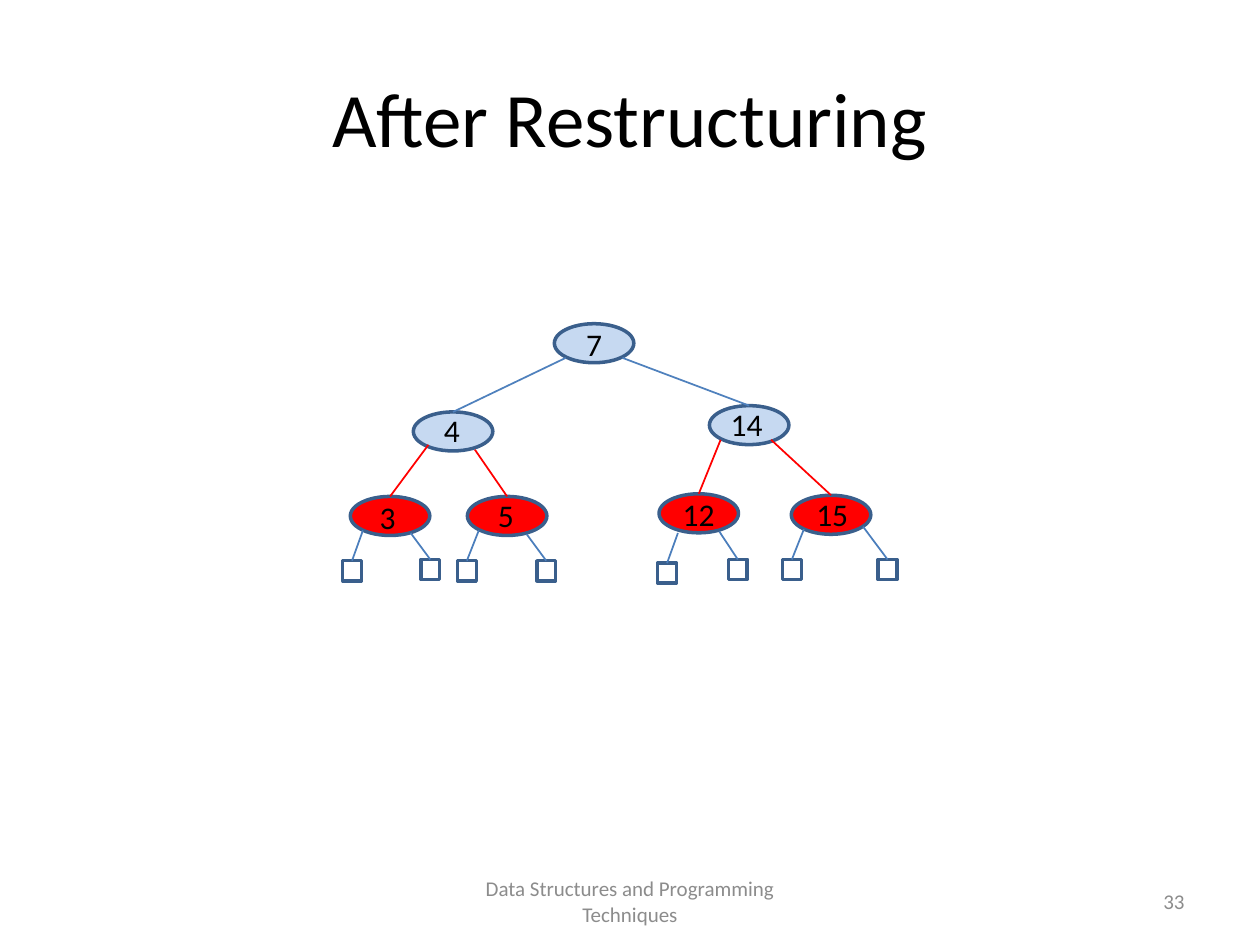
from pptx import Presentation
from pptx import util as u
from pptx.dml.color import RGBColor
from pptx.enum import shapes, text
from pptx.oxml.ns import qn
from lxml import etree

Pt = u.Pt
BLUE, RED, EDGE, STEM, RIM = "C6D9F1", "FF0000", "4F81BD", "4B7EBC", "3A5F8C"
OVAL = shapes.MSO_SHAPE.OVAL
RECT = shapes.MSO_SHAPE.RECTANGLE


def rgb(code):
    return RGBColor.from_string(code)


class Tree:
    font = "Calibri"
    node_size = (45.4, 22.3)
    leaf_size = (10.8, 11.5)
    label_size = (35.3, 28.8)

    def __init__(self, slide):
        self.slide = slide

    def text(self, words, box, size, color="000000",
             align=text.PP_ALIGN.CENTER, anchor=text.MSO_ANCHOR.MIDDLE):
        frame = self.slide.shapes.add_textbox(*map(Pt, box)).text_frame
        frame.word_wrap = True
        frame.vertical_anchor = anchor
        para = frame.paragraphs[0]
        para.text = words
        para.alignment = align
        para.font.name = self.font
        para.font.size = Pt(size)
        para.font.color.rgb = rgb(color)

    def shape(self, kind, spot, size, fill=None):
        item = self.slide.shapes.add_shape(kind, *map(Pt, spot + size))
        item.shadow.inherit = False
        if fill:
            item.fill.solid()
            item.fill.fore_color.rgb = rgb(fill)
        else:
            item.fill.background()
        item.line.color.rgb = rgb(RIM)
        item.line.width = Pt(2)
        return item

    def node(self, spot, fill):
        return self.shape(OVAL, spot, self.node_size, fill)

    def leaf(self, spot):
        return self.shape(RECT, spot, self.leaf_size)

    def label(self, words, spot):
        self.text(words, spot + self.label_size, 18,
                  anchor=text.MSO_ANCHOR.TOP)

    def edge(self, start, child, color):
        """Draw a line from a point to the top of the child shape."""
        x, y = map(Pt, start)
        line = self.slide.shapes.add_connector(
            shapes.MSO_CONNECTOR.STRAIGHT, x, y, x, y)
        line.end_connect(child, 0)
        line.line.color.rgb = rgb(color)
        line.line.width = Pt(1)
        etree.SubElement(line._element.spPr, qn("a:effectLst"))


# key: node corner, label corner, fill
NODES = {
    "7": ((316.8, 185), (321.8, 182.2), BLUE),
    "4": ((236.2, 235.4), (240.5, 231.1), BLUE),
    "14": ((405.4, 231.8), (409, 228.2), BLUE),
    "3": ((200.2, 283.7), (203.8, 280.8), RED),
    "5": ((267.1, 283.7), (271.4, 280.1), RED),
    "12": ((376.6, 282.2), (381.6, 279.4), RED),
    "15": ((452.2, 283), (457.9, 279.4), RED),
}
# start on the parent, child key, colour
EDGES = [
    ((323.3, 204.5), "4", EDGE),
    ((355.7, 204.5), "14", EDGE),
    ((244.8, 254.2), "3", RED),
    ((271.4, 257), "5", RED),
    ((411.8, 251.3), "12", RED),
    ((440.6, 251.3), "15", RED),
]
# start on the parent, leaf corner
LEAVES = [
    ((207.4, 303.1), (195.8, 320.4)),
    ((234.7, 304.6), (240.5, 319.7)),
    ((273.6, 303.1), (261.4, 320.4)),
    ((301, 305.3), (306.7, 320.4)),
    ((387.4, 304.6), (375.8, 321.8)),
    ((411.1, 303.8), (416.2, 319.7)),
    ((459.4, 302.4), (447.1, 319.7)),
    ((493.2, 301), (501.8, 319.7)),
]


def main():
    deck = Presentation()
    deck.slide_width, deck.slide_height = Pt(720), Pt(540)
    tree = Tree(deck.slides.add_slide(deck.slide_layouts[6]))

    tree.text("After Restructuring", (36, 21.6, 648, 90), 44)
    tree.text("Data Structures and Programming Techniques",
              (246, 500.5, 228, 28.8), 12, "8C8C8C")
    tree.text("33", (516, 500.5, 168, 28.8), 12, "8C8C8C",
              text.PP_ALIGN.RIGHT)

    ovals = {key: tree.node(spot, fill)
             for key, (spot, _, fill) in NODES.items()}
    for start, key, color in EDGES:
        tree.edge(start, ovals[key], color)
    for start, spot in LEAVES:
        tree.edge(start, tree.leaf(spot), STEM)
    for key, (_, spot, _) in NODES.items():
        tree.label(key, spot)

    deck.save("out.pptx")


if __name__ == "__main__":
    main()
